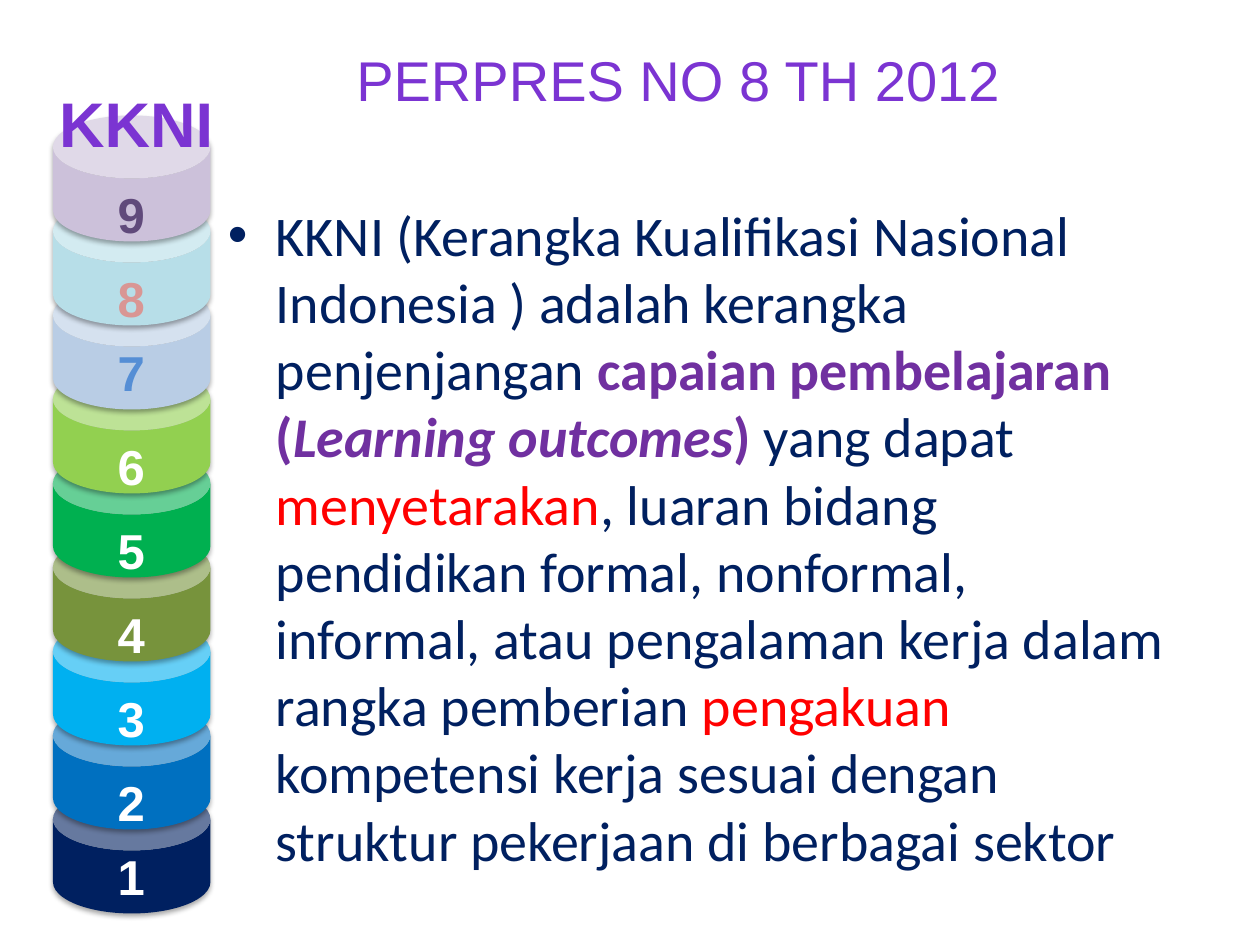
"""Build a slide defining KKNI beside a nine-level stack of cylinders."""
from lxml.etree import SubElement
from pptx import Presentation
from pptx.dml.color import RGBColor
from pptx.enum.shapes import MSO_SHAPE
from pptx.enum.text import PP_ALIGN
from pptx.oxml.ns import qn
from pptx.util import Inches, Pt

COLORS = {
    "navy": "002060", "purple": "7030A0", "red": "FF0000", "violet": "7B34D2",
    "white": "FFFFFF", "blue": "0070C0", "sky": "00B0F0", "olive": "77933C",
    "green": "00B050", "lime": "92D050", "pale_blue": "B9CDE5",
    "pale_aqua": "B7DEE8", "pale_purple": "CCC1DA", "mid_blue": "558ED5",
    "rose": "D99694", "plum": "604A7B", "black": "000000",
}
LEVELS = [
    ("1", "navy", "white"), ("2", "blue", "white"), ("3", "sky", "white"),
    ("4", "olive", "white"), ("5", "green", "white"), ("6", "lime", "white"),
    ("7", "pale_blue", "mid_blue"), ("8", "pale_aqua", "rose"),
    ("9", "pale_purple", "plum"),
]
BODY = [
    ("KKNI (Kerangka Kualifikasi Nasional Indonesia ) adalah kerangka penjenjangan ", "navy", {}),
    ("capaian pembelajaran (", "purple", {"bold": True}),
    ("Learning outcomes", "purple", {"bold": True, "italic": True}),
    (") ", "purple", {"bold": True}),
    ("yang dapat ", "navy", {}),
    ("menyetarakan", "red", {}),
    (", luaran bidang pendidikan formal, nonformal, informal, atau pengalaman"
     " kerja dalam rangka pemberian ", "navy", {}),
    ("pengakuan ", "red", {}),
    ("kompetensi kerja sesuai dengan struktur pekerjaan di berbagai sektor", "navy", {}),
]
WIDTH, HEIGHT = 10, 7.5
STACK_LEFT, STACK_BOTTOM, CAN_W, CAN_H = 0.42, 7.25, 1.25, 1
STEP = CAN_H * 2 / 3
LABEL_W, LABEL_H, LABEL_DROP = 0.5, 0.57, 0.5
RAISED = {"1": 0.08, "7": 0.08}


def color(name):
    return RGBColor.from_string(COLORS[name])


def add_text(shapes, box, runs, font, size, align=PP_ALIGN.LEFT):
    tf = shapes.add_textbox(*map(Inches, box)).text_frame
    tf.word_wrap = True
    p = tf.paragraphs[0]
    p.alignment = align
    for text, name, styles in runs:
        r = p.add_run()
        r.text = text
        r.font.color.rgb = color(name)
        for key, value in {"name": font, "size": Pt(size), **styles}.items():
            setattr(r.font, key, value)
    return p


def add_can(shapes, top, fill):
    box = (STACK_LEFT, top, CAN_W, CAN_H)
    can = shapes.add_shape(MSO_SHAPE.CAN, *map(Inches, box))
    can.adjustments[0] = 0.5
    can.fill.solid()
    can.fill.fore_color.rgb = color(fill)
    can.line.fill.background()
    can.shadow.inherit = False
    effects = can.fill._xPr.find(qn("a:effectLst"))
    shadow = SubElement(effects, qn("a:outerShdw"), blurRad=str(Pt(3.1)),
                        dist=str(Pt(1.8)), dir="5400000", rotWithShape="0")
    tint = SubElement(shadow, qn("a:srgbClr"), val=COLORS["black"])
    SubElement(tint, qn("a:alpha"), val="35000")


def add_bullet(p, indent):
    pPr = p._p.get_or_add_pPr()
    pPr.set("marL", str(Inches(indent)))
    pPr.set("indent", str(-Inches(indent)))
    SubElement(pPr, qn("a:buFont"), typeface="Arial")
    SubElement(pPr, qn("a:buChar"), char="•")


def main():
    prs = Presentation()
    prs.slide_width, prs.slide_height = Inches(WIDTH), Inches(HEIGHT)
    s = prs.slides.add_slide(prs.slide_layouts[6])

    add_bullet(add_text(s.shapes, (1.71, 1.54, 7.79, 5.71), BODY, "Calibri", 32), 0.38)

    stack = s.shapes.add_group_shape().shapes
    tops = [STACK_BOTTOM - CAN_H - i * STEP for i in range(len(LEVELS))]
    for top, (_, fill, _) in zip(tops, LEVELS):
        add_can(stack, top, fill)
    label_left = STACK_LEFT + (CAN_W - LABEL_W) / 2 + 0.04
    for top, (level, _, ink) in zip(tops, LEVELS):
        label_top = top + LABEL_DROP - RAISED.get(level, 0)
        add_text(stack, (label_left, label_top, LABEL_W, LABEL_H),
                 [(level, ink, {"bold": True})], "Arial", 28)
    add_text(stack, (0.29, 0.62, 1.58, 0.71),
             [("KKNI", "violet", {"bold": True})], "Arial", 36, PP_ALIGN.CENTER)

    add_text(s.shapes, (2.73, 0.31, 6.64, 0.64),
             [("PERPRES NO 8 TH 2012", "violet", {})], "Arial", 32)
    prs.save("out.pptx")


if __name__ == "__main__":
    main()
